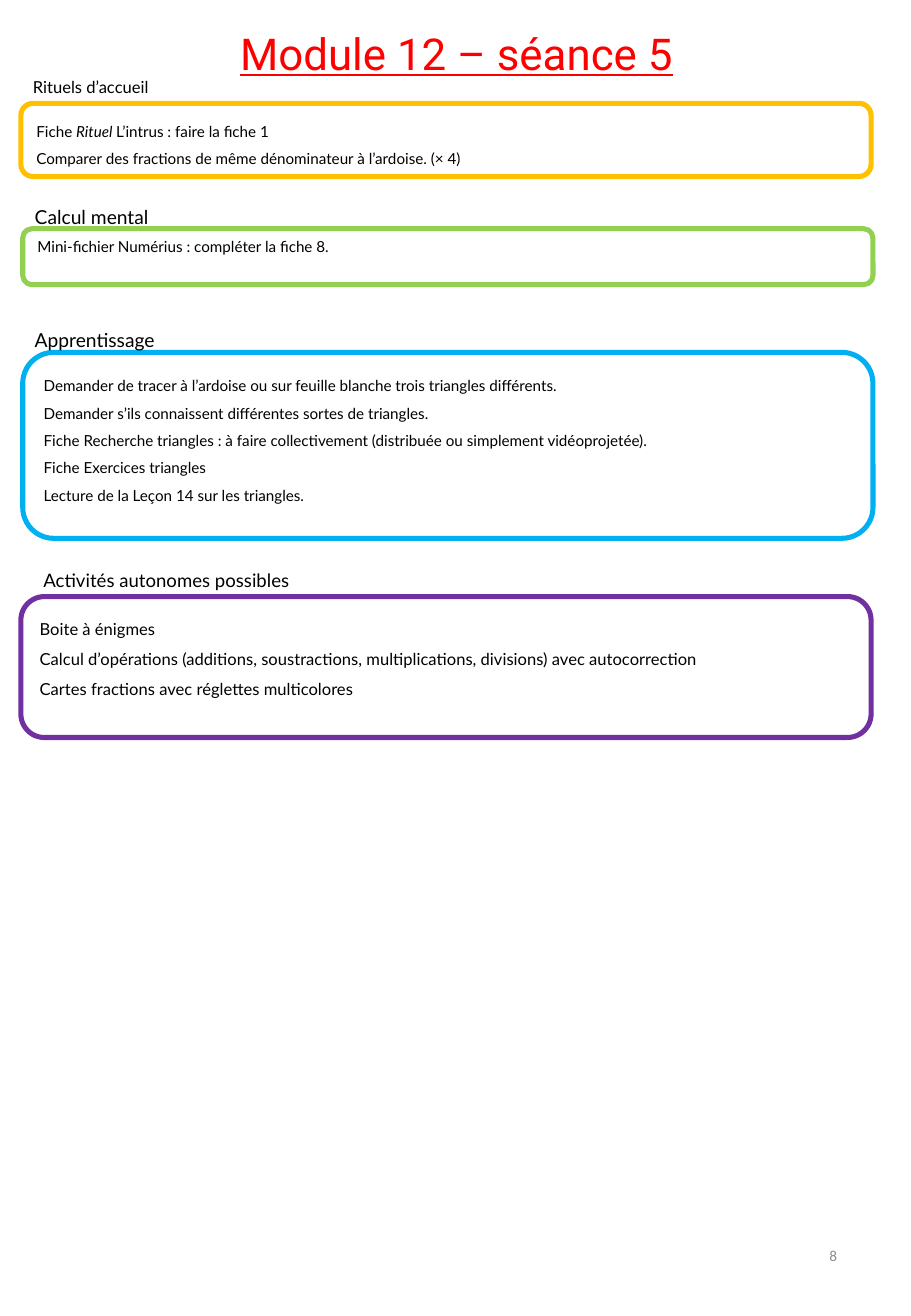
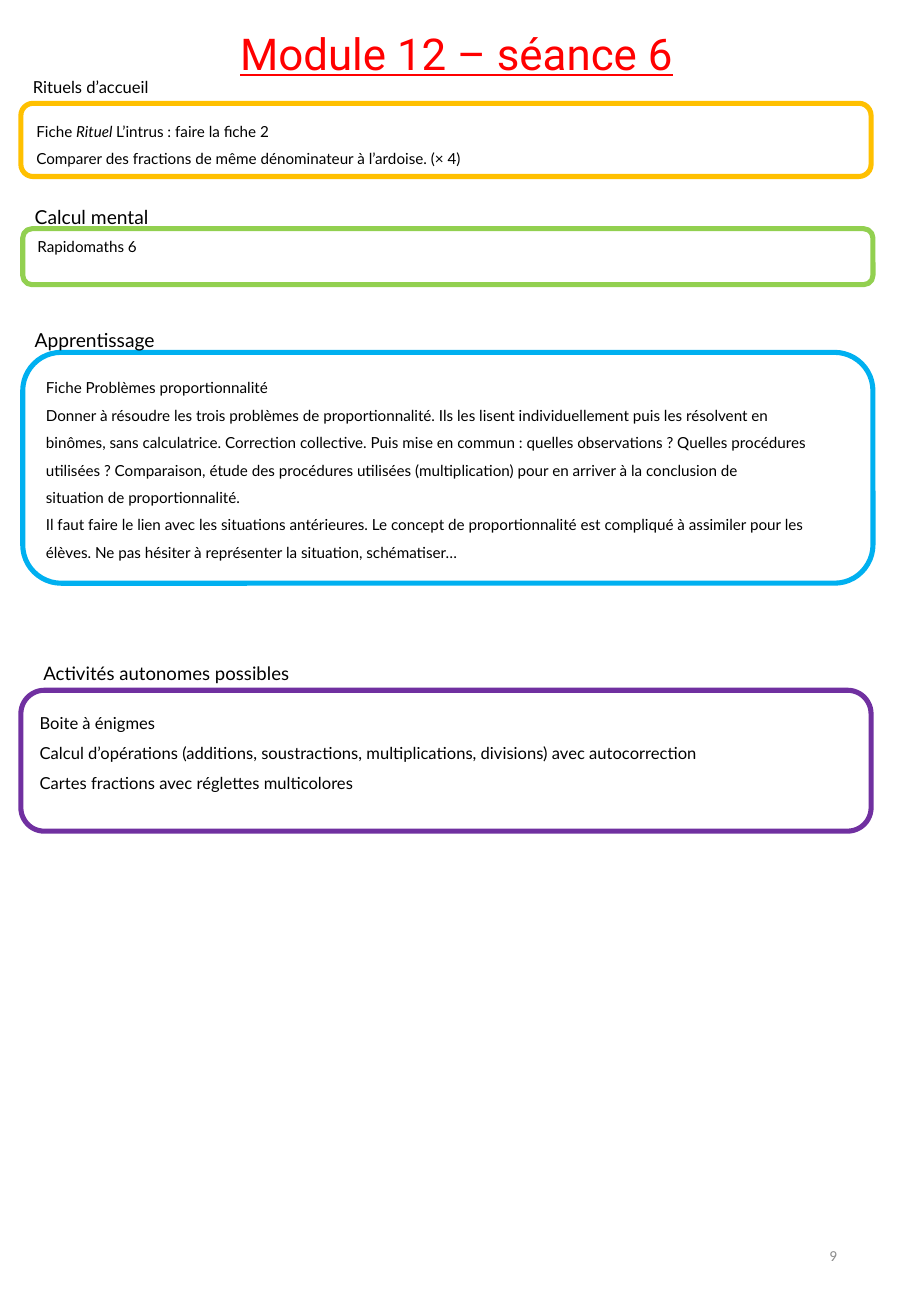
from pptx import Presentation
from pptx.dml.color import RGBColor
from pptx.enum.shapes import MSO_SHAPE
from pptx.enum.text import MSO_ANCHOR, MSO_AUTO_SIZE, PP_ALIGN
from pptx.util import Pt

ROUNDED = MSO_SHAPE.ROUNDED_RECTANGLE
TOP, MIDDLE = MSO_ANCHOR.TOP, MSO_ANCHOR.MIDDLE
LEFT, CENTER, RIGHT = PP_ALIGN.LEFT, PP_ALIGN.CENTER, PP_ALIGN.RIGHT
TITLE_ONLY = 5


def color(hex_string):
    return RGBColor.from_string(hex_string)


def write(frame, lines, size=9, font="Lato", ink="000000", underline=None,
          align=LEFT, anchor=TOP, spacing=None):
    """Fill a text frame; a line is a string or a list of (text, italic) spans."""
    frame.word_wrap = True
    frame.auto_size = MSO_AUTO_SIZE.NONE
    frame.vertical_anchor = anchor
    for index, line in enumerate(lines):
        para = frame.add_paragraph() if index else frame.paragraphs[0]
        para.alignment = align
        if spacing:
            para.line_spacing = spacing
        for text, italic in [(line, None)] if isinstance(line, str) else line:
            span = para.add_run()
            span.text = text
            span.font.name = font
            span.font.size = Pt(size)
            span.font.italic = italic
            span.font.underline = underline
            span.font.color.rgb = color(ink)


class LessonDeck:
    """Shared style of the lesson pages, and the page being built."""
    width, height = 540, 779.76
    box_width = 504
    border = 3
    yellow, green, blue, purple = "FFC000", "92D050", "00B0F0", "7030A0"
    red, gray = "FF0000", "8C8C8C"

    def __init__(self):
        self.deck = Presentation()
        self.deck.slide_width = Pt(self.width)
        self.deck.slide_height = Pt(self.height)
        self.page = None

    def add_page(self, title, number):
        self.page = self.deck.slides.add_slide(self.deck.slide_layouts[TITLE_ONLY])
        heading = self.page.shapes.title
        heading.left, heading.top = Pt(131), Pt(12.2)
        heading.width, heading.height = Pt(279.4), Pt(39)
        write(heading.text_frame, [title], size=26, font="Roboto", ink=self.red,
              underline=True, align=CENTER)
        self.text(str(number), 381.6, 722.9, 121.7, 41.8, font="Calibri",
                  ink=self.gray, align=RIGHT, anchor=MIDDLE)

    def text(self, text, left, top, width, height, **style):
        box = self.page.shapes.add_textbox(Pt(left), Pt(top), Pt(width), Pt(height))
        write(box.text_frame, [text], **style)

    def box(self, lines, left, top, height, line_color, **style):
        box = self.page.shapes.add_shape(ROUNDED, Pt(left), Pt(top),
                                         Pt(self.box_width), Pt(height))
        box.shadow.inherit = False
        box.fill.background()
        box.line.color.rgb = color(line_color)
        box.line.width = Pt(self.border)
        write(box.text_frame, lines, **style)

    def section(self, label, lines, left, top, height, line_color, rise,
                label_size=11.4, indent=0, size=9, spacing=1.5):
        """A framed list whose label starts `rise` points above the frame."""
        self.box(lines, left, top, height, line_color, size=size, spacing=spacing)
        self.text(label, left + indent, top - rise, 234, 21, size=label_size)

    def lesson(self, number, session, ritual, mental, learning, learning_height,
               activities_top):
        self.add_page(f"Module 12 – séance {session}", number)
        # Welcome rituals
        self.section("Rituels d’accueil", [
            [("Fiche ", None), ("Rituel ", True),
             (f"L’intrus : faire la fiche {ritual}", None)],
            "Comparer des fractions de même dénominateur à l’ardoise. (× 4)",
        ], 12.4, 61.2, 43.4, self.yellow, rise=19.4, label_size=9.8)
        # Mental arithmetic
        self.section("Calcul mental", [mental], 13.5, 135.5, 33.2, self.green,
                     rise=17.5, spacing=None)
        # Main lesson
        self.section("Apprentissage", learning, 13.5, 208.8, learning_height,
                     self.blue, rise=18)
        # Independent work
        self.section("Activités autonomes possibles", [
            "Boite à énigmes",
            "Calcul d’opérations (additions, soustractions, multiplications, "
            "divisions) avec autocorrection",
            "Cartes fractions avec réglettes multicolores",
        ], 12.4, activities_top, 83.5, self.purple, rise=20.2, label_size=11,
            indent=6.2, size=9.8)


def main():
    lessons = LessonDeck()
    # Session 5
    lessons.lesson(8, 5, 1, "Mini-fichier Numérius : compléter la fiche 8.", [
        "Demander de tracer à l’ardoise ou sur feuille blanche trois triangles différents.",
        "Demander s’ils connaissent différentes sortes de triangles.",
        "Fiche Recherche triangles : à faire collectivement (distribuée ou simplement "
        "vidéoprojetée).",
        "Fiche Exercices triangles",
        "Lecture de la Leçon 14 sur les triangles.",
    ], learning_height=110.2, activities_top=353.5)
    # Session 6
    lessons.lesson(9, 6, 2, "Rapidomaths 6", [
        "Fiche Problèmes proportionnalité",
        "Donner à résoudre les trois problèmes de proportionnalité. Ils les lisent "
        "individuellement puis les résolvent en",
        "binômes, sans calculatrice. Correction collective. Puis mise en commun : "
        "quelles observations ? Quelles procédures",
        "utilisées ? Comparaison, étude des procédures utilisées (multiplication) "
        "pour en arriver à la conclusion de",
        "situation de proportionnalité.",
        "Il faut faire le lien avec les situations antérieures. Le concept de "
        "proportionnalité est compliqué à assimiler pour les",
        "élèves. Ne pas hésiter à représenter la situation, schématiser…",
    ], learning_height=136.8, activities_top=409)
    lessons.deck.save("out.pptx")


if __name__ == "__main__":
    main()
